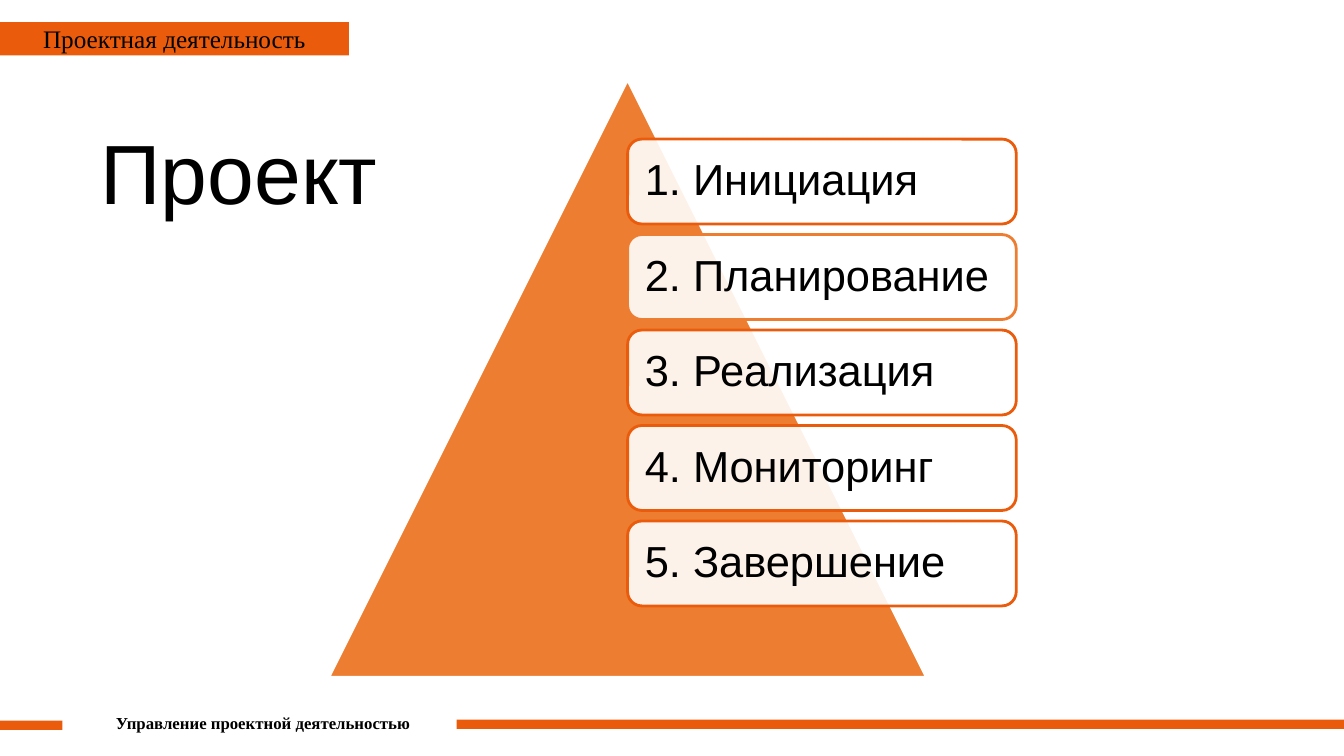
from lxml.etree import SubElement
from pptx import Presentation
from pptx.dml.color import RGBColor
from pptx.enum.shapes import MSO_SHAPE
from pptx.enum.text import MSO_ANCHOR, MSO_AUTO_SIZE, PP_ALIGN
from pptx.oxml.ns import qn
from pptx.util import Inches, Pt

# Content
SECTION = "Проектная деятельность"
TITLE = "Проект"
FOOTER = "Управление проектной деятельностью"
STAGES = ["Инициация", "Планирование", "Реализация", "Мониторинг", "Завершение"]
LIGHT_STAGE = "Планирование"

COLORS = {"accent": "EB5B0C", "pyramid": "ED7D31", "paper": "FFFFFF", "ink": "000000"}
SANS, SERIF = "Arial", "Times New Roman"

# Layout in inches: left, top, width, height
WIDTH, HEIGHT = 13.33, 7.5
SECTION_BAR = (0, 0.22, 3.46, 0.33)
FOOTER_BARS = [(0, 7.15, 0.62, 0.09), (4.53, 7.14, WIDTH - 4.53, 0.09)]
FOOTER_BOX = (0.7, 7.02, 3.82, 0.3)
TITLE_BOX = (0.9, 1.15, 2.97, 1.11)
PYRAMID_LEFT, PYRAMID_TOP, PYRAMID_SIDE = 3.26, 0.79, 5.93

# Stages start at the pyramid's axis; the gap is an eighth of a card
CARD_LEFT = PYRAMID_LEFT + PYRAMID_SIDE / 2
CARD_TOP = 1.38
CARD_WIDTH = PYRAMID_SIDE * 0.65
CARD_HEIGHT = 0.842
CARD_PITCH = CARD_HEIGHT * 9 / 8


def color(name):
    return RGBColor.from_string(COLORS[name])


def add_block(page, preset, area, fill, line=None):
    block = page.shapes.add_shape(preset, *map(Inches, area))
    block.shadow.inherit = False
    block.fill.solid()
    block.fill.fore_color.rgb = color(fill)
    if line:
        block.line.color.rgb = color(line)
        block.line.width = Pt(2)
    else:
        block.line.fill.background()
    return block


def write(box, text, font, size, align=PP_ALIGN.LEFT, bold=False, wrap=True):
    frame = box.text_frame
    frame.text = text
    frame.word_wrap = wrap
    para = frame.paragraphs[0]
    para.alignment = align
    span = para.runs[0]
    span.font.name = font
    span.font.size = Pt(size)
    span.font.bold = bold
    span.font.color.rgb = color("ink")
    return frame


def add_text(page, area, *args, **options):
    box = page.shapes.add_textbox(*map(Inches, area))
    frame = write(box, *args, **options)
    frame.auto_size = MSO_AUTO_SIZE.SHAPE_TO_FIT_TEXT


def add_stage(page, index, stage):
    area = (CARD_LEFT, CARD_TOP + index * CARD_PITCH, CARD_WIDTH, CARD_HEIGHT)
    line = "pyramid" if stage == LIGHT_STAGE else "accent"
    card = add_block(page, MSO_SHAPE.ROUNDED_RECTANGLE, area, "paper", line)
    # Slightly see-through fill
    fill = card.fill._xPr.find(qn("a:solidFill"))
    SubElement(fill[0], qn("a:alpha"), val="90000")
    frame = write(card, f"{index + 1}. {stage}", SANS, 31)
    frame.vertical_anchor = MSO_ANCHOR.MIDDLE
    frame.margin_left = frame.margin_right = Inches(0.13)
    frame.margin_top = frame.margin_bottom = Inches(0.13)
    frame.paragraphs[0].line_spacing = 0.9


def main():
    deck = Presentation()
    deck.slide_width, deck.slide_height = Inches(WIDTH), Inches(HEIGHT)
    page = deck.slides.add_slide(deck.slide_layouts[6])

    # Header and footer
    for area in FOOTER_BARS:
        add_block(page, MSO_SHAPE.RECTANGLE, area, "accent")
    section = add_block(page, MSO_SHAPE.RECTANGLE, SECTION_BAR, "accent")
    frame = write(section, SECTION, SERIF, 18, PP_ALIGN.CENTER)
    frame.vertical_anchor = MSO_ANCHOR.MIDDLE
    add_text(page, FOOTER_BOX, FOOTER, SERIF, 12, PP_ALIGN.CENTER, bold=True)

    # Title
    add_text(page, TITLE_BOX, TITLE, SANS, 60, wrap=False)

    # Pyramid with the stages
    pyramid = (PYRAMID_LEFT, PYRAMID_TOP, PYRAMID_SIDE, PYRAMID_SIDE)
    add_block(page, MSO_SHAPE.ISOSCELES_TRIANGLE, pyramid, "pyramid", "paper")
    for index, stage in enumerate(STAGES):
        add_stage(page, index, stage)

    deck.save("out.pptx")


if __name__ == "__main__":
    main()
